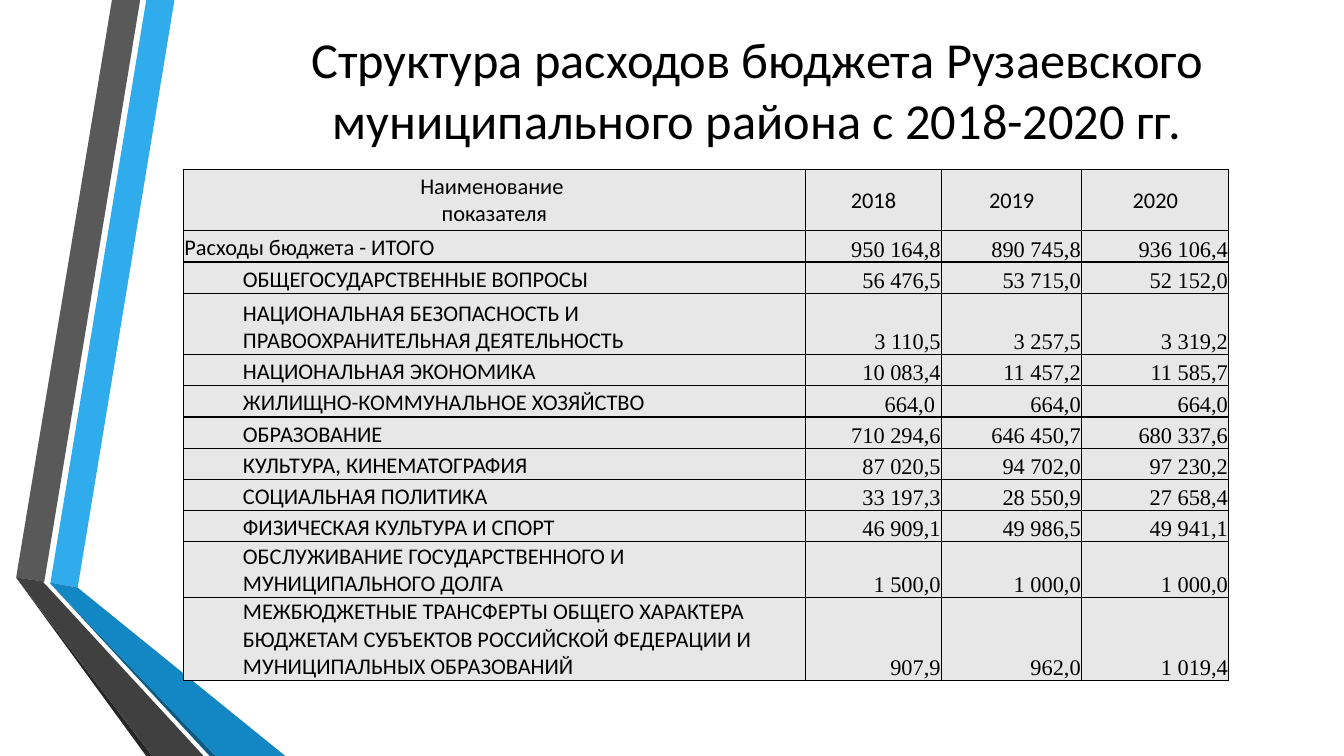
from dataclasses import dataclass

from lxml.etree import SubElement as Sub
from pptx import Presentation
from pptx.dml.color import RGBColor as Rgb
from pptx.enum.text import MSO_ANCHOR as Anchor, MSO_AUTO_SIZE as Fit, PP_ALIGN as Align
from pptx.oxml.ns import qn
from pptx.util import Inches, Pt


@dataclass(frozen=True)
class Theme:
    ink: str = "000000"
    cell: str = "E7E7E7"
    sky: str = "30ACEC"
    blue: str = "1287C3"
    navy: str = "0C5A82"
    gray: str = "595959"
    dark: str = "404040"
    coal: str = "262626"
    sans: str = "Calibri"
    serif: str = "Times New Roman"
    head: int = 36
    body: int = 16
    rule: int = 1


class Page:
    """Holds the theme and the slide; lengths are percent of its width and height."""

    def __init__(self, deck, theme):
        self.theme = theme
        self.wide, self.high = deck.slide_width, deck.slide_height
        self.slide = deck.slides.add_slide(deck.slide_layouts[5])

    def col(self, share):
        return round(self.wide * share / 100)

    def row(self, share):
        return round(self.high * share / 100)

    def style(self, para, size, face, align):
        para.alignment = align
        for run in para.runs:
            run.font.size = Pt(size)
            run.font.name = face
            run.font.color.rgb = Rgb.from_string(self.theme.ink)

    def title(self, text, left, top, width, height):
        box = self.slide.shapes.title
        box.left, box.top = self.col(left), self.row(top)
        box.width, box.height = self.col(width), self.row(height)
        frame = box.text_frame
        frame.text = text
        frame.word_wrap = True
        frame.auto_size = Fit.NONE
        frame.vertical_anchor = Anchor.MIDDLE
        self.style(frame.paragraphs[0], self.theme.head, self.theme.sans, Align.CENTER)

    def ribbon(self, color, points):
        spots = [(self.col(x), self.row(y)) for x, y in points]
        pen = self.slide.shapes.build_freeform(*spots[0])
        pen.add_line_segments(spots[1:], close=True)
        shape = pen.convert_to_shape()
        shape.shadow.inherit = False
        shape.fill.solid()
        shape.fill.fore_color.rgb = Rgb.from_string(color)
        shape.line.fill.background()

    def border(self, cell):
        props = cell._tc.get_or_add_tcPr()
        for side in ("lnL", "lnR", "lnT", "lnB"):
            line = Sub(props, qn(f"a:{side}"), w=str(Pt(self.theme.rule)))
            Sub(Sub(line, qn("a:solidFill")), qn("a:srgbClr"), val=self.theme.ink)

    def fill(self, cell, text, face, align, anchor, inset=False):
        """Writes and formats one table cell; inset marks a sub-item name."""
        self.border(cell)
        cell.fill.solid()
        cell.fill.fore_color.rgb = Rgb.from_string(self.theme.cell)
        cell.margin_left = Inches(0.09 if inset else 0.01)
        cell.margin_top = cell.margin_right = Inches(0.01)
        cell.margin_bottom = 0
        cell.vertical_anchor = anchor
        para = cell.text_frame.paragraphs[0]
        para.text = text
        self.style(para, self.theme.body, face, align)
        if inset:
            para.level = 1
            props = para._p.get_or_add_pPr()
            props.set("marL", str(Inches(0.5)))
            props.set("indent", "0")

    def table(self, data, left, top, widths, heights):
        frame = self.slide.shapes.add_table(
            len(data), len(widths), self.col(left), self.row(top),
            self.col(sum(widths)), self.row(sum(heights)))
        grid = frame.table
        grid.first_row = grid.horz_banding = False
        for col, width in zip(grid.columns, widths):
            col.width = self.col(width)
        for row, height in zip(grid.rows, heights):
            row.height = self.row(height)
        sans, serif = self.theme.sans, self.theme.serif
        for r, line in enumerate(data):
            for c, text in enumerate(line):
                cell = grid.cell(r, c)
                if r == 0:
                    self.fill(cell, text, sans, Align.CENTER, Anchor.MIDDLE)
                elif c == 0:
                    self.fill(cell, text, sans, Align.LEFT, Anchor.BOTTOM, inset=r > 1)
                else:
                    self.fill(cell, text, serif, Align.RIGHT, Anchor.BOTTOM)


BUDGET = [
    ("Наименование \vпоказателя", "2018", "2019", "2020"),
    ("Расходы бюджета - ИТОГО", "950 164,8", "890 745,8", "936 106,4"),
    ("ОБЩЕГОСУДАРСТВЕННЫЕ ВОПРОСЫ", "56 476,5", "53 715,0", "52 152,0"),
    ("НАЦИОНАЛЬНАЯ БЕЗОПАСНОСТЬ И ПРАВООХРАНИТЕЛЬНАЯ ДЕЯТЕЛЬНОСТЬ",
     "3 110,5", "3 257,5", "3 319,2"),
    ("НАЦИОНАЛЬНАЯ ЭКОНОМИКА", "10 083,4", "11 457,2", "11 585,7"),
    ("ЖИЛИЩНО-КОММУНАЛЬНОЕ ХОЗЯЙСТВО", "664,0 ", "664,0", "664,0"),
    ("ОБРАЗОВАНИЕ", "710 294,6", "646 450,7", "680 337,6"),
    ("КУЛЬТУРА, КИНЕМАТОГРАФИЯ", "87 020,5", "94 702,0", "97 230,2"),
    ("СОЦИАЛЬНАЯ ПОЛИТИКА", "33 197,3", "28 550,9", "27 658,4"),
    ("ФИЗИЧЕСКАЯ КУЛЬТУРА И СПОРТ", "46 909,1", "49 986,5", "49 941,1"),
    ("ОБСЛУЖИВАНИЕ ГОСУДАРСТВЕННОГО И МУНИЦИПАЛЬНОГО ДОЛГА",
     "1 500,0", "1 000,0", "1 000,0"),
    ("МЕЖБЮДЖЕТНЫЕ ТРАНСФЕРТЫ ОБЩЕГО ХАРАКТЕРА БЮДЖЕТАМ СУБЪЕКТОВ "
     "РОССИЙСКОЙ ФЕДЕРАЦИИ И МУНИЦИПАЛЬНЫХ ОБРАЗОВАНИЙ",
     "907,9", "962,0", "1 019,4"),
]


def main():
    deck = Presentation()
    deck.slide_width, deck.slide_height = Inches(13.33), Inches(7.5)
    theme = Theme()
    page = Page(deck, theme)

    ribbons = [
        (theme.sky, [(3.75, 77.07), (5.78, 77.73), (12.98, 0), (10.88, 0)]),
        (theme.gray, [(10.43, 0), (8.33, 0), (1.2, 76.4), (3.3, 76.93)]),
        (theme.coal, [(1.2, 76.4), (10.88, 100), (11.33, 100)]),
        (theme.navy, [(3.75, 77.2), (15.6, 100), (16.05, 100)]),
        (theme.blue, [(3.75, 77.2), (16.05, 100), (21.23, 100), (5.78, 77.73),
                      (3.75, 77.07)]),
        (theme.dark, [(15.15, 100), (3.6, 77.73), (3.23, 77.07), (3.3, 76.93),
                      (1.2, 76.4), (11.33, 100)]),
    ]
    for color, points in ribbons:
        page.ribbon(color, points)

    left = 13.65
    page.title("Структура расходов бюджета Рузаевского муниципального района "
               "с 2018-2020 гг.", left, 2.53, 85.43, 18.4)
    one, two, three = 4.13, 8.13, 9.73
    heights = [two, one, one, two] + [one] * 7 + [three]
    page.table(BUDGET, left, 22.4, [46.28, 10.13, 10.43, 10.95], heights)
    deck.save("out.pptx")


if __name__ == "__main__":
    main()
